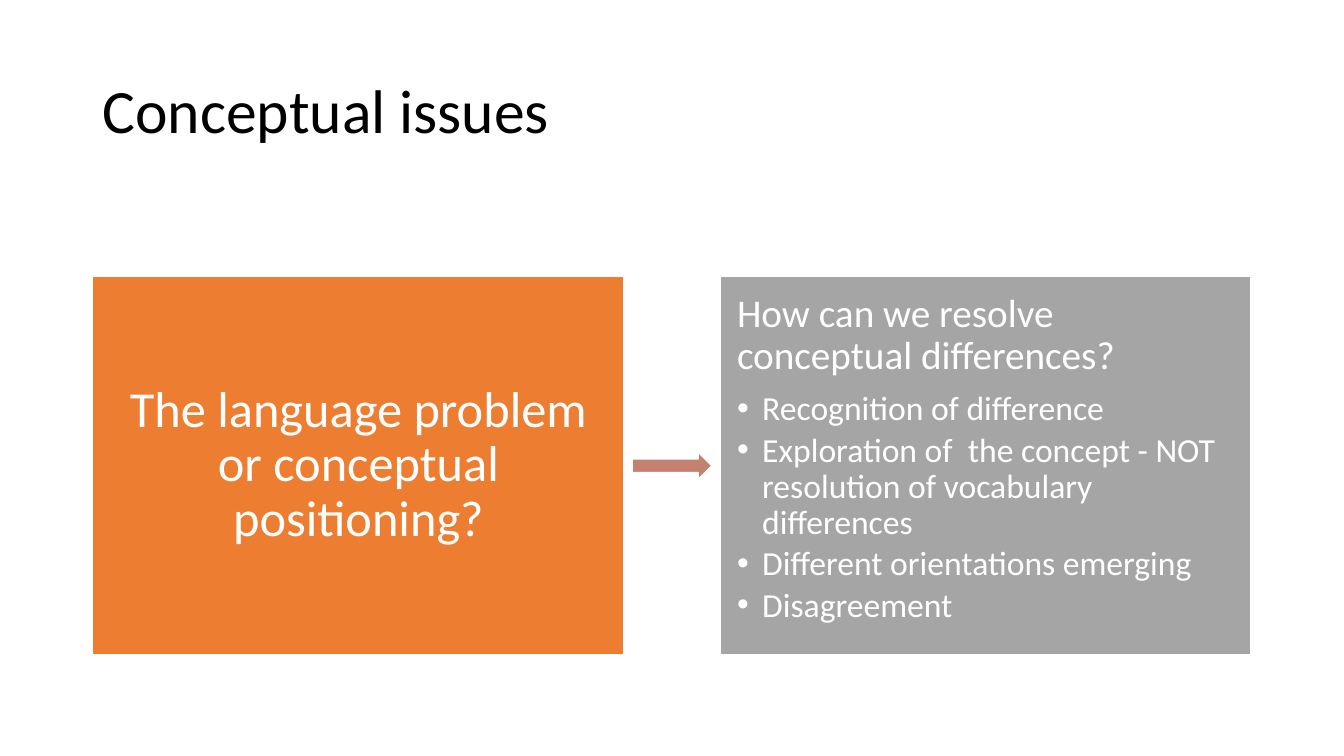
"""Build the "Conceptual issues" slide: a question leading to ways of resolving it."""
from lxml import etree
from pptx import Presentation
from pptx.dml.color import RGBColor
from pptx.enum.shapes import MSO_SHAPE
from pptx.enum.text import MSO_ANCHOR, PP_ALIGN
from pptx.oxml.ns import qn
from pptx.util import Inches, Pt

RECTANGLE, RIGHT_ARROW = MSO_SHAPE.RECTANGLE, MSO_SHAPE.RIGHT_ARROW
TOP, MIDDLE = MSO_ANCHOR.TOP, MSO_ANCHOR.MIDDLE
LEFT, CENTER = PP_ALIGN.LEFT, PP_ALIGN.CENTER
BLACK = RGBColor(0x00, 0x00, 0x00)
WHITE = RGBColor(0xFF, 0xFF, 0xFF)
ORANGE = RGBColor(0xED, 0x7D, 0x31)
GREY = RGBColor(0xA5, 0xA5, 0xA5)
CLAY = RGBColor(0xC4, 0x81, 0x70)

WIDTH, HEIGHT = 13.33, 7.5
MARGIN = 0.92
PANEL_WIDTH, PANEL_HEIGHT, PANEL_TOP = 5.27, 3.76, 2.74
ANSWER_LEFT = WIDTH - MARGIN - PANEL_WIDTH
ARROW_WIDTH, ARROW_HEIGHT = 0.79, 0.27
ARROW_LEFT = (WIDTH - ARROW_WIDTH) / 2
ARROW_TOP = PANEL_TOP + (PANEL_HEIGHT - ARROW_HEIGHT) / 2
PADDING = 0.17
BULLET_INDENT = Inches(0.25)

ANSWERS = [
    "Recognition of difference",
    "Exploration of  the concept - NOT resolution of vocabulary differences",
    "Different orientations emerging",
    "Disagreement",
]


def write(frame, text, size, color=WHITE, align=LEFT, after=0, bullet=False):
    """Fill the empty first paragraph, or append a new one."""
    paragraph = frame.paragraphs[0] if not frame.text else frame.add_paragraph()
    paragraph.alignment = align
    paragraph.line_spacing = 0.9
    paragraph.space_before = Pt(0)
    paragraph.space_after = Pt(after)
    run = paragraph.add_run()
    run.text = text
    run.font.size = Pt(size)
    run.font.name = "Calibri"
    run.font.color.rgb = color
    if bullet:
        paragraph.level = 1
        properties = paragraph._p.get_or_add_pPr()
        properties.set("marL", str(BULLET_INDENT))
        properties.set("indent", str(-BULLET_INDENT))
        etree.SubElement(properties, qn("a:buFont")).set("typeface", "Arial")
        etree.SubElement(properties, qn("a:buChar")).set("char", "•")


def add_block(kind, left, top, width, height, color, anchor=MIDDLE):
    """Draw a filled shape with a white outline and return its text frame."""
    block = slide.shapes.add_shape(
        kind, Inches(left), Inches(top), Inches(width), Inches(height))
    block.shadow.inherit = False
    block.fill.solid()
    block.fill.fore_color.rgb = color
    block.line.color.rgb = WHITE
    block.line.width = Pt(1)
    frame = block.text_frame
    frame.word_wrap = True
    frame.vertical_anchor = anchor
    frame.margin_left = frame.margin_right = Inches(PADDING)
    frame.margin_top = frame.margin_bottom = Inches(PADDING)
    return frame


deck = Presentation()
deck.slide_width, deck.slide_height = Inches(WIDTH), Inches(HEIGHT)
slide = deck.slides.add_slide(deck.slide_layouts[6])
slide.background.fill.solid()
slide.background.fill.fore_color.rgb = WHITE

title = slide.shapes.add_textbox(
    Inches(MARGIN), Inches(0.4), Inches(WIDTH - 2 * MARGIN), Inches(1.45)).text_frame
title.word_wrap = True
title.vertical_anchor = MIDDLE
write(title, "Conceptual issues", 44, color=BLACK)

question = add_block(RECTANGLE, MARGIN, PANEL_TOP, PANEL_WIDTH, PANEL_HEIGHT, ORANGE)
write(question, "The language problem or conceptual positioning?", 36,
      align=CENTER, after=12.6)

add_block(RIGHT_ARROW, ARROW_LEFT, ARROW_TOP, ARROW_WIDTH, ARROW_HEIGHT, CLAY)

resolution = add_block(
    RECTANGLE, ANSWER_LEFT, PANEL_TOP, PANEL_WIDTH, PANEL_HEIGHT, GREY, anchor=TOP)
write(resolution, "How can we resolve conceptual differences?", 28, after=9.8)
for answer in ANSWERS:
    write(resolution, answer, 24, after=3.6, bullet=True)

deck.save("out.pptx")
